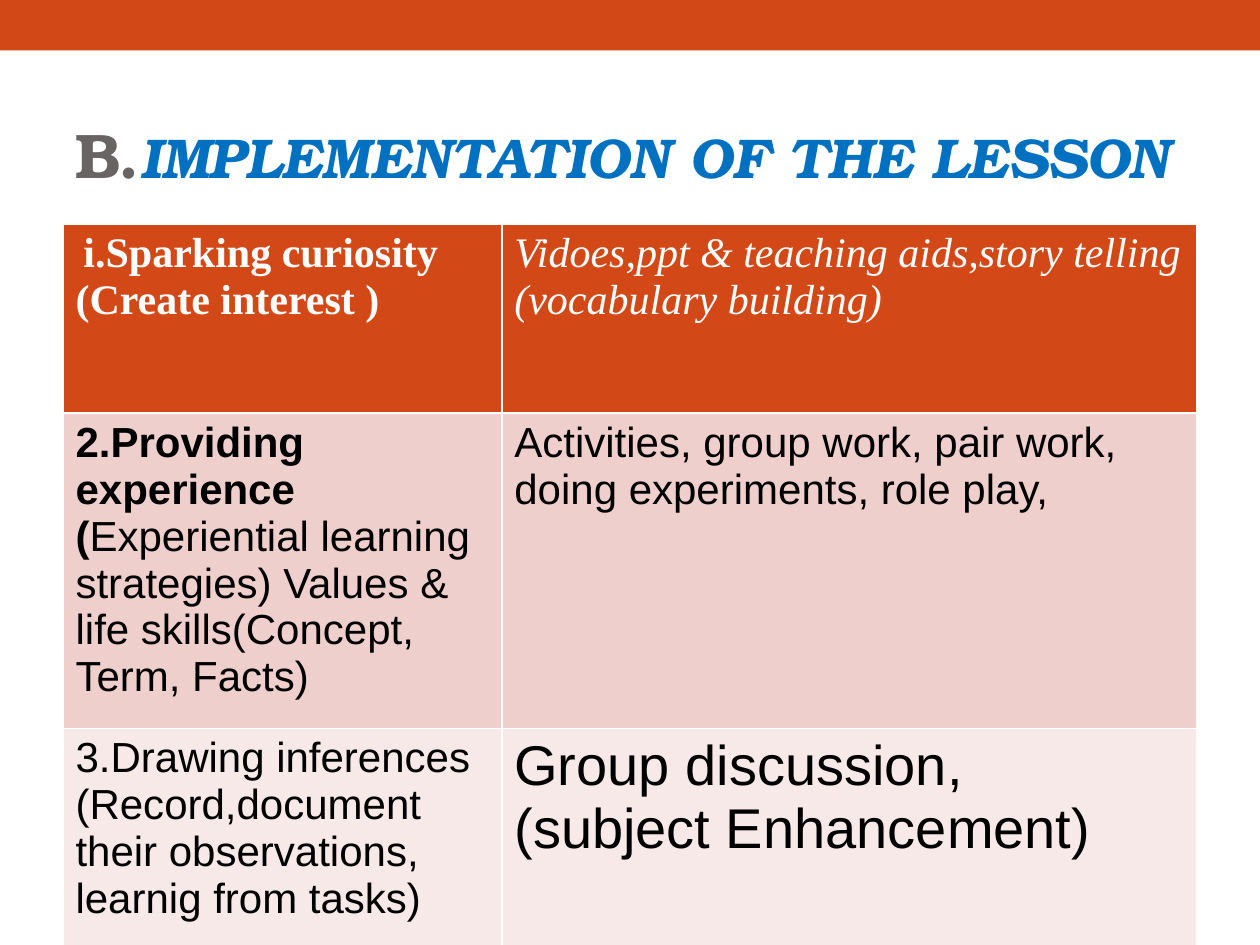
from pptx import Presentation
from pptx.dml.color import RGBColor
from pptx.enum.shapes import MSO_SHAPE
from pptx.enum.text import MSO_ANCHOR
from pptx.util import Cm, Pt

RECTANGLE = MSO_SHAPE.RECTANGLE
MIDDLE = MSO_ANCHOR.MIDDLE

ACCENT, WHITE, BLACK = "D34817", "FFFFFF", "000000"
SERIF, SANS, DISPLAY = "Times New Roman", "Arial", "TeX Gyre Bonum"
COLUMN_SHARES = (0.387, 0.613)
ROW_HEIGHTS = (3.81, 4.6, 4.39)
ROW_FILLS = (ACCENT, "EFCFCC", "F7E9E8")
ROW_FONTS = ((SERIF, WHITE), (SANS, BLACK), (SANS, BLACK))

# Each cell is a list of paragraphs; each paragraph is a list of (text, style) runs.
BOLD, ITALIC, PLAIN = {"bold": True}, {"italic": True}, {}
LARGE = {"size": Pt(32)}
CELLS = (
    (
        [[(" ", {"bold": True, "size": Pt(18)}), ("i.Sparking curiosity", BOLD)],
         [("(Create interest )", BOLD)]],
        [[("Vidoes,ppt & teaching aids,story telling (vocabulary building)", ITALIC)]],
    ),
    (
        [[("2.Providing experience", BOLD)],
         [("(", BOLD),
          ("Experiential learning strategies) Values & life skills"
           "(Concept, Term, Facts)", PLAIN)]],
        [[("Activities, group work, pair work, doing experiments, role play,", PLAIN)]],
    ),
    (
        [[("3.Drawing inferences (Record,document their observations, "
           "learnig from tasks)", PLAIN)]],
        [[("Group discussion,", LARGE)], [("(subject Enhancement)", LARGE)]],
    ),
)


def color(value):
    """Turn a hex string into a colour."""
    return RGBColor.from_string(value)


def add_band(slide, left, top, width, height):
    """Draw the solid band along the top edge."""
    shape = slide.shapes.add_shape(RECTANGLE, Cm(left), Cm(top), Cm(width), Cm(height))
    shape.shadow.inherit = False
    shape.fill.solid()
    shape.fill.fore_color.rgb = color(ACCENT)
    shape.line.fill.background()


def add_title(slide, left, top, width, height):
    """Write the two-tone heading in the given box."""
    shape = slide.shapes.add_textbox(Cm(left), Cm(top), Cm(width), Cm(height))
    frame = shape.text_frame
    frame.word_wrap = True
    frame.vertical_anchor = MIDDLE
    paragraph = frame.paragraphs[0]
    paragraph.font.name = DISPLAY
    paragraph.font.bold = True
    for text, size, hue, italic, spacing in (
        ("B.", 36, "696464", False, "-100"),
        ("IMPLEMENTATION OF THE LESSON", 32, "0070C0", True, "0"),
    ):
        run = paragraph.add_run()
        run.text = text
        run.font.name = DISPLAY
        run.font.bold = True
        run.font.size = Pt(size)
        run.font.italic = italic
        run.font.color.rgb = color(hue)
        run.font._element.set("spc", spacing)


def fill_cell(cell, paragraphs, fill, font_name, font_color):
    """Fill one cell and write its paragraphs."""
    cell.fill.solid()
    cell.fill.fore_color.rgb = color(fill)
    frame = cell.text_frame
    for index, runs in enumerate(paragraphs):
        paragraph = frame.add_paragraph() if index else frame.paragraphs[0]
        for text, style in runs:
            run = paragraph.add_run()
            run.text = text
            run.font.name = font_name
            run.font.color.rgb = color(font_color)
            run.font.size = style.get("size", Pt(24))
            run.font.bold = style.get("bold", False)
            run.font.italic = style.get("italic", False)


def add_lesson_table(slide, left, top, width):
    """Place the table of lesson steps."""
    table = slide.shapes.add_table(
        len(ROW_HEIGHTS), len(COLUMN_SHARES),
        Cm(left), Cm(top), Cm(width), Cm(sum(ROW_HEIGHTS)),
    ).table
    for column, share in zip(table.columns, COLUMN_SHARES):
        column.width = Cm(width * share)
    for row, height, texts, fill, font in zip(
        table.rows, ROW_HEIGHTS, CELLS, ROW_FILLS, ROW_FONTS
    ):
        row.height = Cm(height)
        for cell, paragraphs in zip(row.cells, texts):
            fill_cell(cell, paragraphs, fill, *font)


def main():
    """Build the slide and save it."""
    presentation = Presentation()
    presentation.slide_width = Cm(25.4)
    presentation.slide_height = Cm(19.05)
    slide = presentation.slides.add_slide(presentation.slide_layouts[6])
    add_band(slide, 0, 0, 25.4, 1.02)
    add_title(slide, 1.27, 1.47, 22.86, 3.25)
    add_lesson_table(slide, 1.27, 4.52, 22.86)
    presentation.save("out.pptx")


if __name__ == "__main__":
    main()
